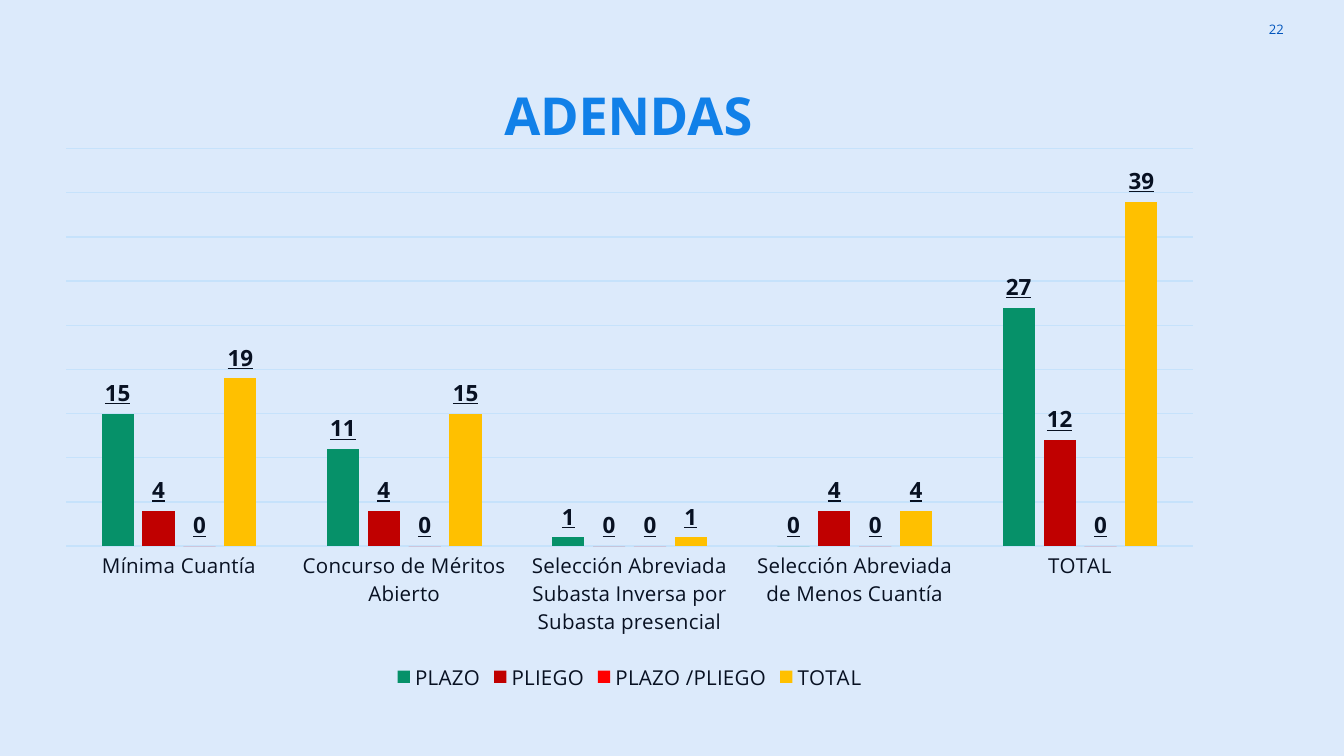
from lxml.etree import SubElement
from pptx import Presentation
from pptx.chart.data import CategoryChartData
from pptx.dml.color import RGBColor
from pptx.enum.chart import XL_CHART_TYPE, XL_LABEL_POSITION, XL_LEGEND_POSITION, XL_TICK_MARK
from pptx.enum.text import MSO_ANCHOR, PP_ALIGN
from pptx.oxml.ns import qn
from pptx.util import Inches, Pt

COLORS = {"bg": "DCEAFB", "title": "1180E8", "number": "0054BC", "base": "073763",
          "text": "081122", "grid": "C6E2FB"}
CATEGORIES = ["Mínima Cuantía", "Concurso de Méritos Abierto",
              "Selección Abreviada Subasta Inversa por Subasta presencial",
              "Selección Abreviada de Menos Cuantía", "TOTAL"]
SERIES = [("PLAZO", [15, 11, 1, 0, 27], "069169"),
          ("PLIEGO", [4, 4, 0, 4, 12], "C00000"),
          ("PLAZO /PLIEGO", [0, 0, 0, 0, 0], "FF0000"),
          ("TOTAL", [19, 15, 1, 4, 39], "FFC000")]


class Deck:
    """Holds the style and the current slide, and draws each kind of element."""

    def __init__(self, width):
        self.prs = Presentation()
        self.prs.slide_width, self.prs.slide_height = Inches(width), Inches(width * 9 / 16)
        self.s = self.prs.slides.add_slide(self.prs.slide_layouts[6])
        self.fill(self.s.background.fill, COLORS["bg"])

    def fill(self, fill, color):
        fill.solid()
        fill.fore_color.rgb = RGBColor.from_string(color)

    def font(self, font, color, size, **values):
        values = {"name": "Open Sans", "size": Pt(size), **values}
        for name, value in values.items():
            setattr(font, name, value)
        font.color.rgb = RGBColor.from_string(COLORS[color])

    def line(self, line):
        self.fill(line.fill, COLORS["grid"])
        line.width = Pt(0.75)

    def layout(self, parent, index, **values):
        for old in parent.findall(qn("c:layout")):
            parent.remove(old)
        layout = SubElement(parent, qn("c:layout"))
        parent.insert(index, layout)
        manual = SubElement(layout, qn("c:manualLayout"))
        for name, value in values.items():
            SubElement(manual, qn(f"c:{name}")).set("val", str(value))

    def number(self, text, *box):
        tf = self.s.shapes.add_textbox(*map(Inches, box)).text_frame
        tf.word_wrap = True
        tf.vertical_anchor = MSO_ANCHOR.MIDDLE
        for side in ("left", "top", "right", "bottom"):
            setattr(tf, f"margin_{side}", Inches(0.1))
        p = tf.paragraphs[0]
        p.alignment = PP_ALIGN.RIGHT
        r = p.add_run()
        r.text = text
        self.font(r.font, "number", 7)

    def chart(self, title, categories, series, *box):
        data = CategoryChartData(number_format="0")
        data.categories = categories
        for name, values, _ in series:
            data.add_series(name, values)
        chart = self.s.shapes.add_chart(
            XL_CHART_TYPE.COLUMN_CLUSTERED, *map(Inches, box), data).chart
        self.font(chart.font, "base", 10, name="Arial")
        self.title(chart, title)
        self.axes(chart)
        self.columns(chart.plots[0], series)
        chart.has_legend = True
        chart.legend.position = XL_LEGEND_POSITION.BOTTOM
        chart.legend.include_in_layout = False
        self.font(chart.legend.font, "text", 11)
        plot_area = chart._chartSpace.chart.plotArea
        self.layout(plot_area, 0, layoutTarget="inner", xMode="edge", yMode="edge",
                    x=0.04, y=0.16, w=0.92, h=0.61)

    def title(self, chart, text):
        chart.has_title = True
        p = chart.chart_title.text_frame.paragraphs[0]
        r = p.add_run()
        r.text = text
        self.font(r.font, "title", 28, bold=True)
        self.layout(chart._chartSpace.chart.find(qn("c:title")), 1,
                    xMode="edge", yMode="edge", x=0.39, y=0.03)

    def axes(self, chart):
        axis = chart.category_axis
        axis.major_tick_mark = axis.minor_tick_mark = XL_TICK_MARK.NONE
        self.font(axis.tick_labels.font, "text", 11)
        self.line(axis.format.line)
        axis = chart.value_axis
        axis.minimum_scale, axis.maximum_scale, axis.major_unit = 0, 45, 5
        axis.has_major_gridlines = True
        self.line(axis.major_gridlines.format.line)
        axis.visible = False

    def columns(self, plot, series):
        plot.gap_width, plot.overlap, plot.vary_by_categories = 219, -27, False
        for ser, (_, _, color) in zip(plot.series, series):
            self.fill(ser.format.fill, color)
            ser.invert_if_negative = False
            labels = ser.data_labels
            values = {"show_value": True, "position": XL_LABEL_POSITION.OUTSIDE_END,
                      "number_format": "0", "number_format_is_linked": False}
            for name, value in values.items():
                setattr(labels, name, value)
            self.font(labels.font, "text", 12, bold=True, underline=True)


def main():
    deck = Deck(10)
    deck.number("22", 9.05, 0, 0.6, 0.43)
    deck.chart("ADENDAS", CATEGORIES, SERIES, 0.13, 0.33, 9.11, 4.85)
    deck.prs.save("out.pptx")


if __name__ == "__main__":
    main()
